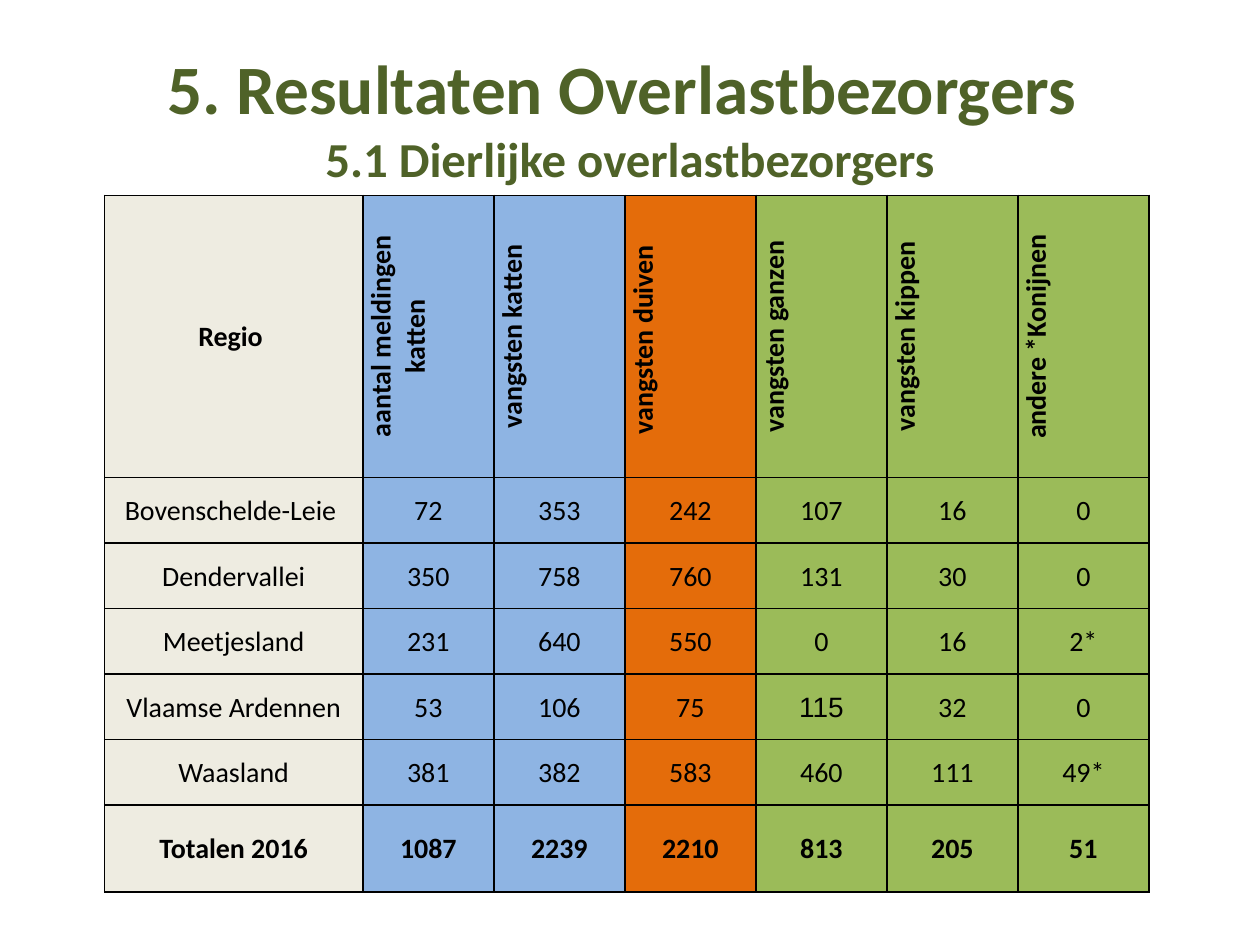
from lxml import etree
from pptx import Presentation
from pptx.dml.color import RGBColor
from pptx.enum.text import MSO_ANCHOR, PP_ALIGN
from pptx.oxml.ns import qn
from pptx.util import Inches, Pt

CENTER = PP_ALIGN.CENTER
MIDDLE = MSO_ANCHOR.MIDDLE

DARK_GREEN = RGBColor(0x4F, 0x62, 0x28)
BLACK = RGBColor(0, 0, 0)
CREAM = RGBColor(0xEE, 0xEC, 0xE1)
BLUE = RGBColor(0x8E, 0xB4, 0xE3)
ORANGE = RGBColor(0xE4, 0x6C, 0x0A)
GREEN = RGBColor(0x9B, 0xBB, 0x59)

COLUMN_FILLS = [CREAM, BLUE, BLUE, ORANGE, GREEN, GREEN, GREEN]
COLUMN_WIDTHS = [2.05] + [1.04] * 6
ROW_HEIGHTS = [1.45] + [0.52] * 5 + [0.69]
ROWS = [
    ["Regio ", "aantal meldingen katten", "vangsten katten", "vangsten duiven ",
     "vangsten ganzen", "vangsten kippen", "andere *Konijnen"],
    ["Bovenschelde-Leie ", "72", "353", "242", "107", "16", "0"],
    ["Dendervallei", "350", "758", "760", "131", "30", "0"],
    ["Meetjesland", "231", "640", "550", "0", "16", "2*"],
    ["Vlaamse Ardennen", "53", "106", "75", "115", "32", "0"],
    ["Waasland", "381", "382", "583", "460", "111", "49*"],
    ["Totalen 2016", "1087", "2239", "2210", "813", "205", "51"],
]
ARIAL_CELL = (4, 4)


def add_run(p, text, size, color, bold, font="Calibri"):
    r = p.add_run()
    r.text = text
    r.font.name = font
    r.font.size = Pt(size)
    r.font.bold = bold
    r.font.color.rgb = color


def add_title(s, left, top, width, height):
    tf = s.shapes.add_textbox(left, top, width, height).text_frame
    tf.word_wrap = True
    tf.vertical_anchor = MIDDLE
    p = tf.paragraphs[0]
    p.alignment = CENTER
    add_run(p, "5. Resultaten Overlastbezorgers ", 39.6, DARK_GREEN, True)
    p.add_line_break()
    add_run(p, "5.1 Dierlijke overlastbezorgers", 27.9, DARK_GREEN, True)


def set_borders(cell):
    """Draw a 1 pt black line on each side; lines must precede the fill."""
    tc_pr = cell._tc.get_or_add_tcPr()
    for i, side in enumerate(("a:lnL", "a:lnR", "a:lnT", "a:lnB")):
        ln = etree.Element(qn(side), w=str(Pt(1)))
        fill = etree.SubElement(ln, qn("a:solidFill"))
        etree.SubElement(fill, qn("a:srgbClr"), val=str(BLACK))
        tc_pr.insert(i, ln)


def fill_cell(cell, text, fill, bold, font, vertical):
    cell.fill.solid()
    cell.fill.fore_color.rgb = fill
    set_borders(cell)
    cell.vertical_anchor = MIDDLE
    cell.margin_left = cell.margin_top = cell.margin_right = Inches(0.01)
    cell.margin_bottom = 0
    if vertical:
        cell._tc.get_or_add_tcPr().set("vert", "vert270")
    p = cell.text_frame.paragraphs[0]
    p.alignment = CENTER
    add_run(p, text, 16, BLACK, bold, font)


def add_results_table(s, left, top):
    table = s.shapes.add_table(
        len(ROWS), len(COLUMN_WIDTHS), left, top,
        Inches(sum(COLUMN_WIDTHS)), Inches(sum(ROW_HEIGHTS))).table
    table.first_row = table.horz_banding = False
    for column, width in zip(table.columns, COLUMN_WIDTHS):
        column.width = Inches(width)
    for row, height in zip(table.rows, ROW_HEIGHTS):
        row.height = Inches(height)
    for i, values in enumerate(ROWS):
        bold = i in (0, len(ROWS) - 1)
        for j, (text, fill) in enumerate(zip(values, COLUMN_FILLS)):
            font = "Arial" if (i, j) == ARIAL_CELL else "Calibri"
            fill_cell(table.cell(i, j), text, fill, bold, font,
                      vertical=i == 0 and j > 0)


def main():
    prs = Presentation()
    prs.slide_width, prs.slide_height = Inches(10), Inches(7.5)
    s = prs.slides.add_slide(prs.slide_layouts[6])
    add_title(s, Inches(0.5), Inches(0.3), Inches(9), Inches(1.25))
    add_results_table(s, Inches(0.83), Inches(1.55))
    prs.save("out.pptx")


if __name__ == "__main__":
    main()
